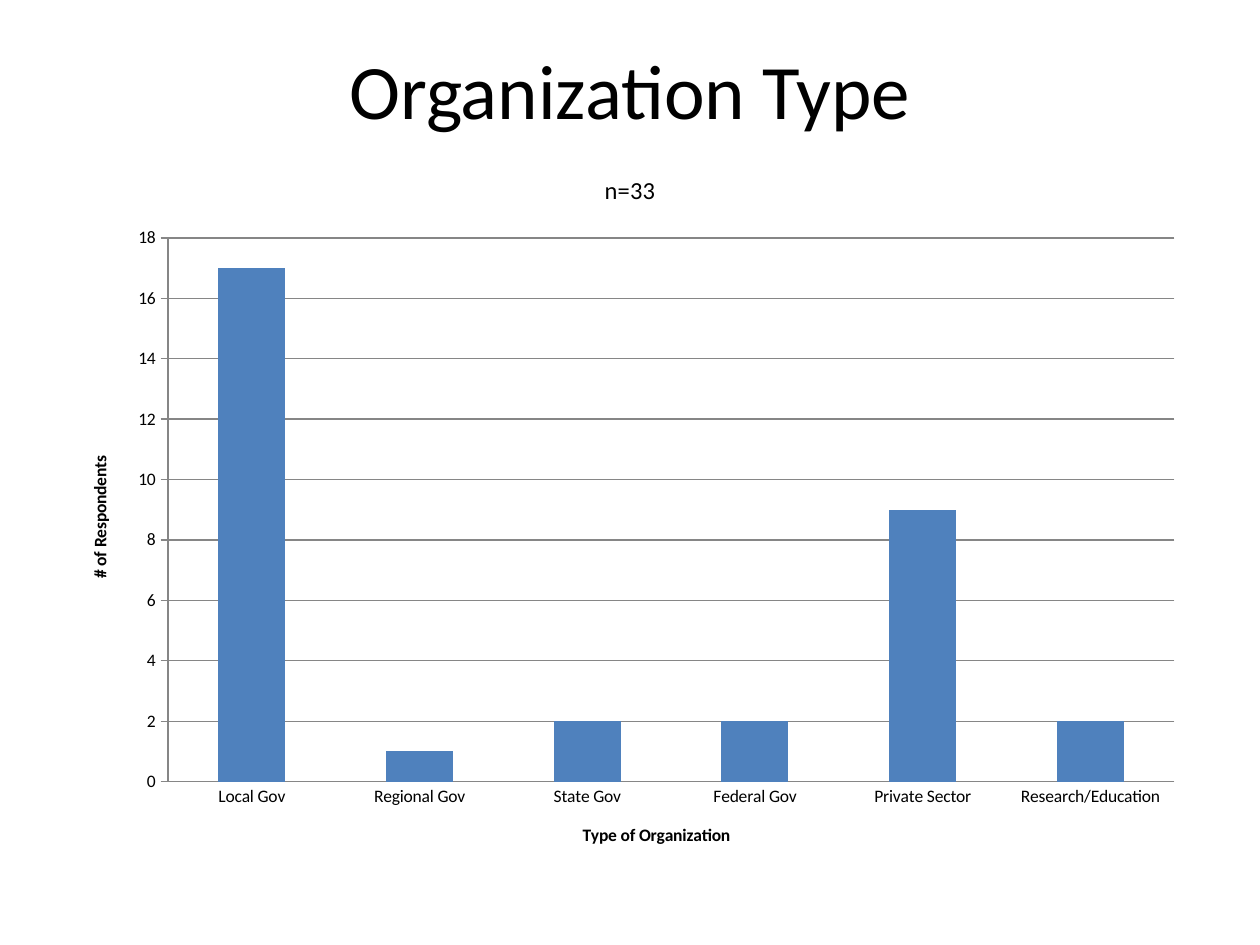
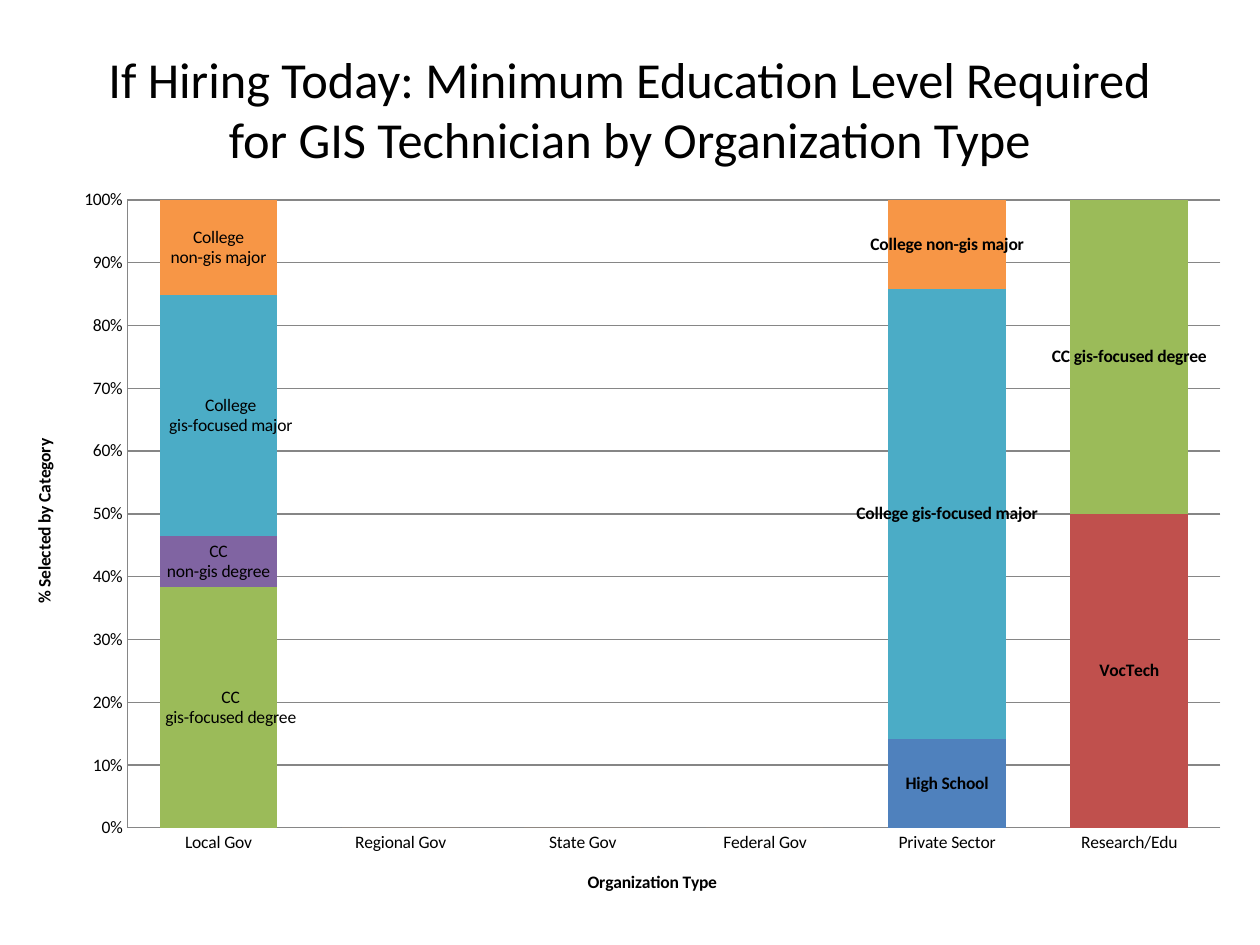
import pptx
import pptx.chart.data
import pptx.dml.color
import pptx.enum.chart
import pptx.enum.text
import pptx.oxml
import pptx.oxml.ns
import pptx.util

RGBColor = pptx.dml.color.RGBColor
BLACK = RGBColor(0x00, 0x00, 0x00)
GRAY = RGBColor(0x86, 0x86, 0x86)
BLUE = RGBColor(0x4F, 0x81, 0xBD)
RED = RGBColor(0xC0, 0x50, 0x4D)
GREEN = RGBColor(0x9B, 0xBB, 0x59)
PURPLE = RGBColor(0x80, 0x64, 0xA2)
TEAL = RGBColor(0x4B, 0xAC, 0xC6)
ORANGE = RGBColor(0xF7, 0x96, 0x46)

FONT = "Calibri"
EMU_PER_PX = 9144
TITLE_ONLY = 5
TYPES = pptx.enum.chart.XL_CHART_TYPE
TICKS = pptx.enum.chart.XL_TICK_MARK
CHART_NS = "http://schemas.openxmlformats.org/drawingml/2006/chart"

SECTORS = ["Local Gov", "Regional Gov", "State Gov", "Federal Gov", "Private Sector"]
EDUCATION = [
    ("High School", BLUE, (0, 0, 0, 0, 14, 0)),
    ("VocTech", RED, (0, 0, 0, 0, 0, 50)),
    ("CC gis-focused degree", GREEN, (38, 0, 0, 0, 0, 50)),
    ("CC non-gis degree", PURPLE, (8, 0, 0, 0, 0, 0)),
    ("College gis-focused major", TEAL, (38, 0, 0, 0, 71, 0)),
    ("College non-gis major", ORANGE, (15, 0, 0, 0, 14, 0)),
]
LOCAL_GOV_LABELS = {
    "CC gis-focused degree": ("CC\ngis-focused degree", 0.01),
    "CC non-gis degree": ("CC\nnon-gis degree", 0),
    "College gis-focused major": ("College\ngis-focused major", 0.01),
    "College non-gis major": ("College\nnon-gis major", 0),
}


def px(*lengths):
    return [pptx.util.Emu(n * EMU_PER_PX) for n in lengths]


def style_font(font, size, bold=False):
    font.name = FONT
    font.size = pptx.util.Pt(size)
    font.bold = bold
    font.color.rgb = BLACK


def add_title_slide(prs, text, box, size):
    s = prs.slides.add_slide(prs.slide_layouts[TITLE_ONLY])
    title = s.shapes.title
    title.left, title.top, title.width, title.height = px(*box)
    tf = title.text_frame
    tf.text = text
    tf.word_wrap = True
    tf.auto_size = pptx.enum.text.MSO_AUTO_SIZE.NONE
    tf.vertical_anchor = pptx.enum.text.MSO_ANCHOR.MIDDLE
    p = tf.paragraphs[0]
    p.alignment = pptx.enum.text.PP_ALIGN.CENTER
    style_font(p.font, size)
    return s


def chart_xml(body):
    return pptx.oxml.parse_xml(body.replace(">", f' xmlns:c="{CHART_NS}">', 1))


def manual_layout(**settings):
    body = "".join(f'<c:{key} val="{value}"/>' for key, value in settings.items())
    return chart_xml(f"<c:layout><c:manualLayout>{body}</c:manualLayout></c:layout>")


def set_plot_area(chart, x, y, w, h):
    area = chart._chartSpace.chart.plotArea
    for old in area.findall(pptx.oxml.ns.qn("c:layout")):
        area.remove(old)
    area.insert(0, manual_layout(layoutTarget="inner", xMode="edge", yMode="edge",
                                 x=x, y=y, w=w, h=h))


def style_axis(axis, title, tick):
    axis.has_title = True
    tf = axis.axis_title.text_frame
    tf.text = title
    style_font(tf.paragraphs[0].font, 10, bold=True)
    axis.major_tick_mark = tick
    axis.minor_tick_mark = TICKS.NONE
    axis.format.line.color.rgb = GRAY


def add_column_chart(s, kind, box, categories, series, axis_titles, value_tick, gap):
    data = pptx.chart.data.CategoryChartData()
    data.categories = categories
    for name, _, values in series:
        data.add_series(name, values)
    chart = s.shapes.add_chart(kind, *px(*box), data).chart
    style_font(chart.font, 10)
    chart.has_legend = False
    chart.has_title = False
    plot = chart.plots[0]
    plot.gap_width = gap
    plot.vary_by_categories = False
    for ser, (_, color, _) in zip(plot.series, series):
        ser.invert_if_negative = False
        ser.format.fill.solid()
        ser.format.fill.fore_color.rgb = color
    style_axis(chart.category_axis, axis_titles[0], TICKS.NONE)
    style_axis(chart.value_axis, axis_titles[1], value_tick)
    chart.value_axis.has_major_gridlines = True
    chart.value_axis.major_gridlines.format.line.color.rgb = GRAY
    return chart


def label_with_name(ser):
    labels = ser.data_labels
    labels.show_series_name = True
    labels.show_value = False
    labels.position = pptx.enum.chart.XL_LABEL_POSITION.CENTER
    style_font(labels.font, 10, bold=True)
    for i, value in reversed(list(enumerate(ser.values))):
        if not value:
            labels._element.insert(0, chart_xml(
                f'<c:dLbl><c:idx val="{i}"/><c:delete val="1"/></c:dLbl>'))


def set_custom_label(ser, index, text, shift):
    label = ser.points[index].data_label
    tf = label.text_frame
    tf.text = text
    for p in tf.paragraphs:
        style_font(p.font, 10)
    label.position = pptx.enum.chart.XL_LABEL_POSITION.CENTER
    if shift:
        idx = ser.data_labels._element.find(
            f'{{{CHART_NS}}}dLbl/{{{CHART_NS}}}idx[@val="{index}"]')
        idx.addnext(manual_layout(x=shift, y=0))


def add_organization_slide(prs):
    s = add_title_slide(prs, "Organization Type", (50, 8, 900, 125), 44)
    chart = add_column_chart(
        s, TYPES.COLUMN_CLUSTERED, (50, 117, 900, 575),
        SECTORS + ["Research/Education"], [("Series 1", BLUE, (17, 1, 2, 2, 9, 2))],
        ("Type of Organization", "# of Respondents"), TICKS.OUTSIDE, 150)
    chart.has_title = True
    tf = chart.chart_title.text_frame
    tf.text = "n=33"
    style_font(tf.paragraphs[0].font, 14)
    chart.value_axis.minimum_scale = 0
    chart.value_axis.maximum_scale = 18
    chart.value_axis.major_unit = 2


def add_education_slide(prs):
    s = add_title_slide(
        prs, "If Hiring Today: Minimum Education Level Required "
        "for GIS Technician by Organization Type", (50, 30, 900, 112), 28.8)
    chart = add_column_chart(
        s, TYPES.COLUMN_STACKED_100, (17, 133, 967, 583),
        SECTORS + ["Research/Edu"], EDUCATION,
        ("Organization Type", "% Selected by Category"), TICKS.NONE, 55)
    chart.plots[0].overlap = 100
    set_plot_area(chart, 0.087, 0.044, 0.897, 0.855)
    tick_labels = chart.value_axis.tick_labels
    tick_labels.number_format = "0%"
    tick_labels.number_format_is_linked = False
    for ser in chart.plots[0].series:
        label_with_name(ser)
        if ser.name in LOCAL_GOV_LABELS:
            set_custom_label(ser, 0, *LOCAL_GOV_LABELS[ser.name])


def main():
    prs = pptx.Presentation()
    prs.slide_width, prs.slide_height = px(1000, 750)
    add_organization_slide(prs)
    add_education_slide(prs)
    prs.save("out.pptx")


if __name__ == "__main__":
    main()
